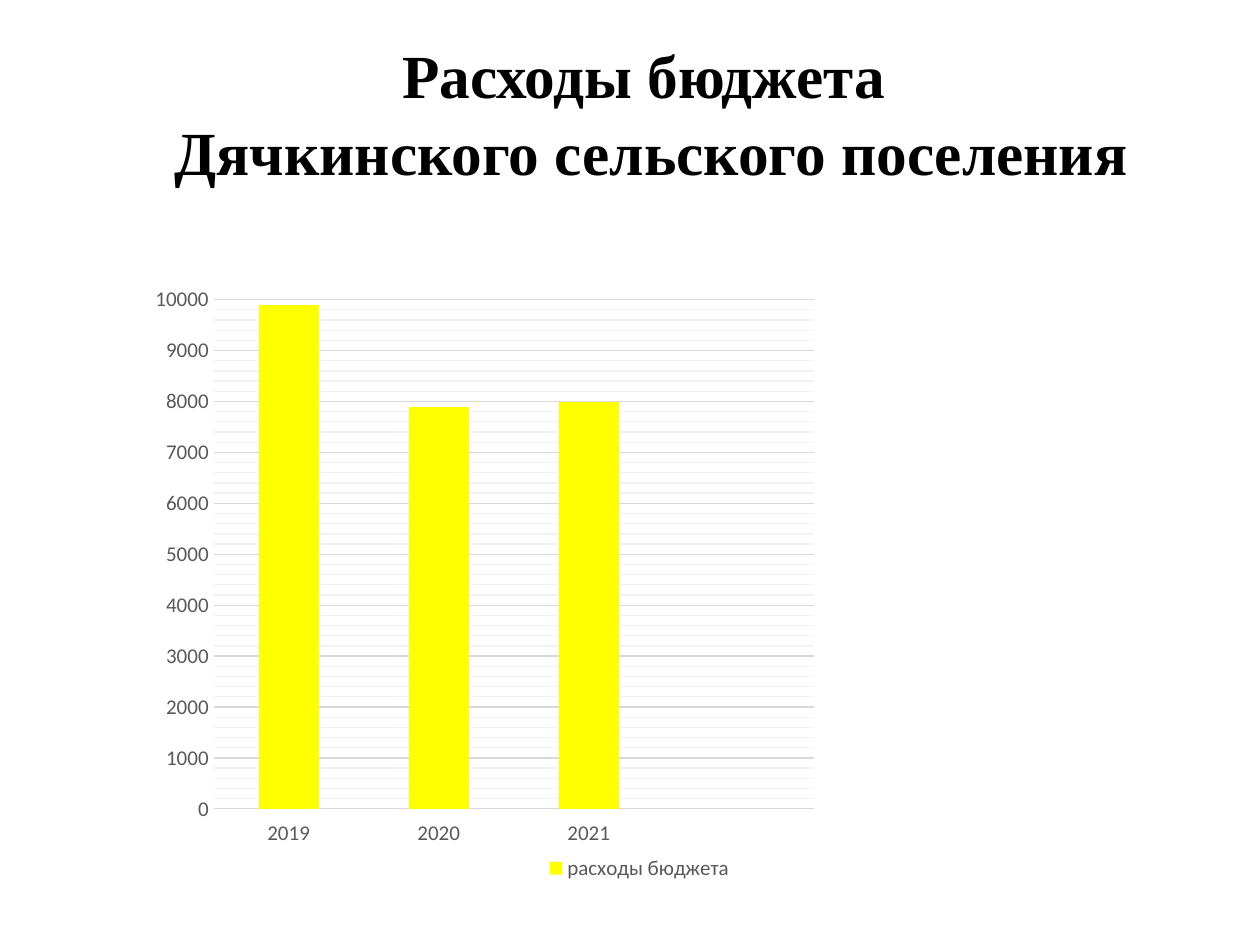
from copy import deepcopy

from lxml import etree
from pptx import Presentation
from pptx.chart.data import CategoryChartData
from pptx.dml.color import RGBColor
from pptx.enum.chart import XL_CHART_TYPE as ChartType
from pptx.enum.chart import XL_LEGEND_POSITION as LegendPosition
from pptx.enum.chart import XL_TICK_LABEL_POSITION as LabelPosition
from pptx.enum.chart import XL_TICK_MARK as TickMark
from pptx.enum.text import MSO_ANCHOR, PP_ALIGN
from pptx.oxml.ns import qn
from pptx.util import Inches, Pt

COLORS = {
    "title": "000000",
    "label": "595959",
    "major_grid": "D9D9D9",
    "minor_grid": "F2F2F2",
    "expenses": "FFFF00",
}
TITLE_LINES = ["Расходы бюджета ", "Дячкинского сельского поселения"]
YEARS = ["2019", "2020", "2021", ""]
EXPENSES = [9900, 7900, 8000, None]
PLOT_AREA = {"x": 0.119, "y": 0.039, "w": 0.537, "h": 0.835}


def color(name):
    return RGBColor.from_string(COLORS[name])


def style_font(font, name, size, color_name, bold=False):
    font.name = name
    font.size = Pt(size)
    font.bold = bold
    font.color.rgb = color(color_name)


def add_title(slide):
    title = slide.shapes.add_textbox(Inches(0.67), Inches(0.25), Inches(9), Inches(1.25))
    frame = title.text_frame
    frame.word_wrap = True
    frame.vertical_anchor = MSO_ANCHOR.MIDDLE
    for index, line in enumerate(TITLE_LINES):
        paragraph = frame.add_paragraph() if index else frame.paragraphs[0]
        paragraph.alignment = PP_ALIGN.CENTER
        paragraph.line_spacing = 1.05
        run = paragraph.add_run()
        run.text = line
        style_font(run.font, "Times New Roman", 35, "title", bold=True)


def style_axis(axis):
    axis.major_tick_mark = axis.minor_tick_mark = TickMark.NONE
    axis.format.line.fill.background()
    style_font(axis.tick_labels.font, "Calibri", 12, "label")


def style_gridlines(axis):
    """Show major gridlines, and minor ones in the same style but paler."""
    axis.has_major_gridlines = axis.has_minor_gridlines = True
    line = axis.major_gridlines.format.line
    line.width = Pt(0.75)
    line.color.rgb = color("major_grid")
    major = axis._element.find(qn("c:majorGridlines"))
    minor = axis._element.find(qn("c:minorGridlines"))
    minor.append(deepcopy(major.find(qn("c:spPr"))))
    next(minor.iter(qn("a:srgbClr"))).set("val", COLORS["minor_grid"])


def place_plot_area(chart):
    """Fix the inner plot area as fractions of the chart."""
    plot_area = chart.plots[0]._element.getparent()
    for automatic in plot_area.findall(qn("c:layout")):
        plot_area.remove(automatic)
    layout = etree.Element(qn("c:layout"))
    plot_area.insert(0, layout)
    manual = etree.SubElement(layout, qn("c:manualLayout"))
    settings = {"layoutTarget": "inner", "xMode": "edge", "yMode": "edge", **PLOT_AREA}
    for tag, value in settings.items():
        etree.SubElement(manual, qn(f"c:{tag}")).set("val", str(value))


def add_expenses_chart(slide):
    data = CategoryChartData()
    data.categories = YEARS
    data.add_series("расходы бюджета", EXPENSES)
    chart = slide.shapes.add_chart(
        ChartType.COLUMN_CLUSTERED,
        Inches(0.64), Inches(2.19), Inches(8.87), Inches(4.84), data,
    ).chart
    chart.has_title = False
    style_font(chart.font, "Calibri", 10, "title")

    columns = chart.plots[0]
    columns.gap_width = 150
    columns.vary_by_categories = False
    expenses = columns.series[0]
    expenses.invert_if_negative = False
    expenses.format.fill.solid()
    expenses.format.fill.fore_color.rgb = color("expenses")

    style_axis(chart.category_axis)
    chart.category_axis.tick_label_position = LabelPosition.LOW
    amounts = chart.value_axis
    style_axis(amounts)
    amounts.minimum_scale, amounts.maximum_scale = 0, 10000
    amounts.major_unit, amounts.minor_unit = 1000, 200
    style_gridlines(amounts)

    chart.has_legend = True
    chart.legend.position = LegendPosition.BOTTOM
    chart.legend.include_in_layout = False
    style_font(chart.legend.font, "Calibri", 12, "label")
    place_plot_area(chart)


def main():
    presentation = Presentation()
    presentation.slide_width = Inches(10)
    presentation.slide_height = Inches(7.5)
    slide = presentation.slides.add_slide(presentation.slide_layouts[6])
    add_title(slide)
    add_expenses_chart(slide)
    presentation.save("out.pptx")


if __name__ == "__main__":
    main()
